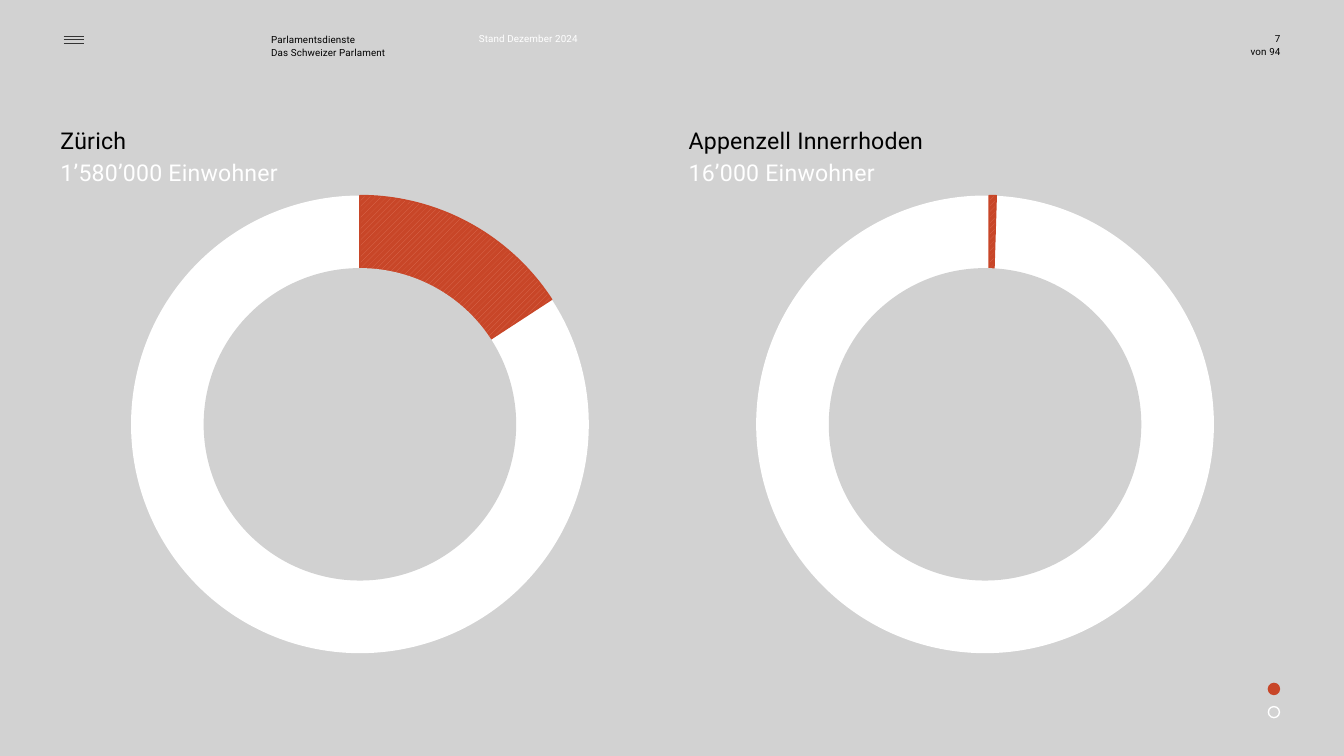
import math
from pptx import Presentation
from pptx import util as u
from pptx.dml.color import RGBColor
from pptx.enum import dml, shapes, text
from pptx.oxml.ns import qn
from lxml import etree

Inches, Pt = u.Inches, u.Pt
BLACK, WHITE, RED, GREY = "000000", "FFFFFF", "C84628", "D2D2D2"
LEFT, RIGHT = text.PP_ALIGN.LEFT, text.PP_ALIGN.RIGHT


def rgb(code):
    return RGBColor.from_string(code)


def write(frame, lines, size, tracking, colors, align, leading):
    frame.margin_left = frame.margin_right = frame.margin_top = frame.margin_bottom = 0
    frame.word_wrap = True
    frame.auto_size = text.MSO_AUTO_SIZE.NONE
    frame.vertical_anchor = text.MSO_ANCHOR.TOP
    frame.text = "\n".join(lines)
    for paragraph, color in zip(frame.paragraphs, colors):
        paragraph.alignment = align
        paragraph.line_spacing = leading
        paragraph.space_before = paragraph.space_after = Pt(0)
        run = paragraph.runs[0]
        run.font.name = "Roboto"
        run.font.size = Pt(size)
        run.font.bold = False
        run.font.color.rgb = rgb(color)
        run.font._element.set("spc", str(tracking))


deck = Presentation()
deck.slide_width, deck.slide_height = Inches(13.33), Inches(7.5)
slide = deck.slides.add_slide(deck.slide_layouts.get_by_name("Comparison"))
slide.background.fill.solid()
slide.background.fill.fore_color.rgb = rgb(GREY)

cantons = {
    1: ("Zürich", "1’580’000 Einwohner", 0.6),
    3: ("Appenzell Innerrhoden", "16’000 Einwohner", 6.83),
}
for placeholder in list(slide.placeholders):
    index = placeholder.placeholder_format.idx
    if index not in cantons:
        placeholder._element.getparent().remove(placeholder._element)
        continue
    canton, residents, left = cantons[index]
    placeholder.left, placeholder.top = Inches(left), Inches(1.22)
    placeholder.width, placeholder.height = Inches(5.59), Inches(0.96)
    write(placeholder.text_frame, [canton, residents], 16.5, 20, [BLACK, WHITE], LEFT, 1.14)

header = [
    (["Parlamentsdienste", "Das Schweizer Parlament"], 2.69, 1.3, 0.32, 0.26, BLACK, LEFT, 1.1),
    (["Stand Dezember 2024"], 4.75, 1.21, 0.32, 0.12, WHITE, LEFT, 1),
    (["7"], 12.26, 0.44, 0.32, 0.12, BLACK, RIGHT, 1),
    (["von 94"], 12.26, 0.44, 0.45, 0.12, BLACK, RIGHT, 1),
]
for lines, left, width, top, height, color, align, leading in header:
    label = slide.shapes.add_textbox(Inches(left), Inches(top), Inches(width), Inches(height))
    write(label.text_frame, lines, 7, 10, [color] * len(lines), align, leading)

for y in (0.36, 0.39, 0.43):
    menu_bar = slide.shapes.add_connector(
        shapes.MSO_CONNECTOR.STRAIGHT, Inches(0.63), Inches(y), Inches(0.83), Inches(y))
    menu_bar.line.color.rgb = rgb("343434")
    menu_bar.line.width = Pt(0.4)
    etree.SubElement(menu_bar._element.spPr, qn("a:effectLst"))

center_y, outer, inner = 4.21, 2.27, 1.55
discs = []
for center_x, wedge_x, sweep in ((3.57, 3.57, 56.9), (9.77, 9.81, 1.8)):
    discs.append((center_x, center_y, outer, WHITE, None))
    discs.append((wedge_x, center_y, sweep, None, None))
    discs.append((center_x, center_y, inner, "D1D1D1", None))
discs += [(12.635, 7.065, 0.055, None, WHITE), (12.635, 6.835, 0.055, RED, RED)]

for x, y, extent, fill, outline in discs:
    if fill or outline:
        disc = slide.shapes.add_shape(
            shapes.MSO_SHAPE.OVAL, Inches(x - extent), Inches(y - extent),
            Inches(2 * extent), Inches(2 * extent))
        if fill:
            disc.fill.solid()
            disc.fill.fore_color.rgb = rgb(fill)
        else:
            disc.fill.background()
    else:
        angles = [math.radians(extent * step / 40) for step in range(41)]
        rim = [(Inches(x + outer * math.sin(a)), Inches(y - outer * math.cos(a))) for a in angles]
        builder = slide.shapes.build_freeform(Inches(x), Inches(y))
        builder.add_line_segments(rim, close=True)
        disc = builder.convert_to_shape()
        disc.fill.patterned()
        disc.fill.pattern = dml.MSO_PATTERN.WIDE_UPWARD_DIAGONAL
        disc.fill.fore_color.rgb = rgb("DD6F55")
        disc.fill.back_color.rgb = rgb(RED)
        outline = RED
    disc.shadow.inherit = False
    if outline:
        disc.line.color.rgb = rgb(outline)
        disc.line.width = Pt(1)
    else:
        disc.line.fill.background()

deck.save("out.pptx")
